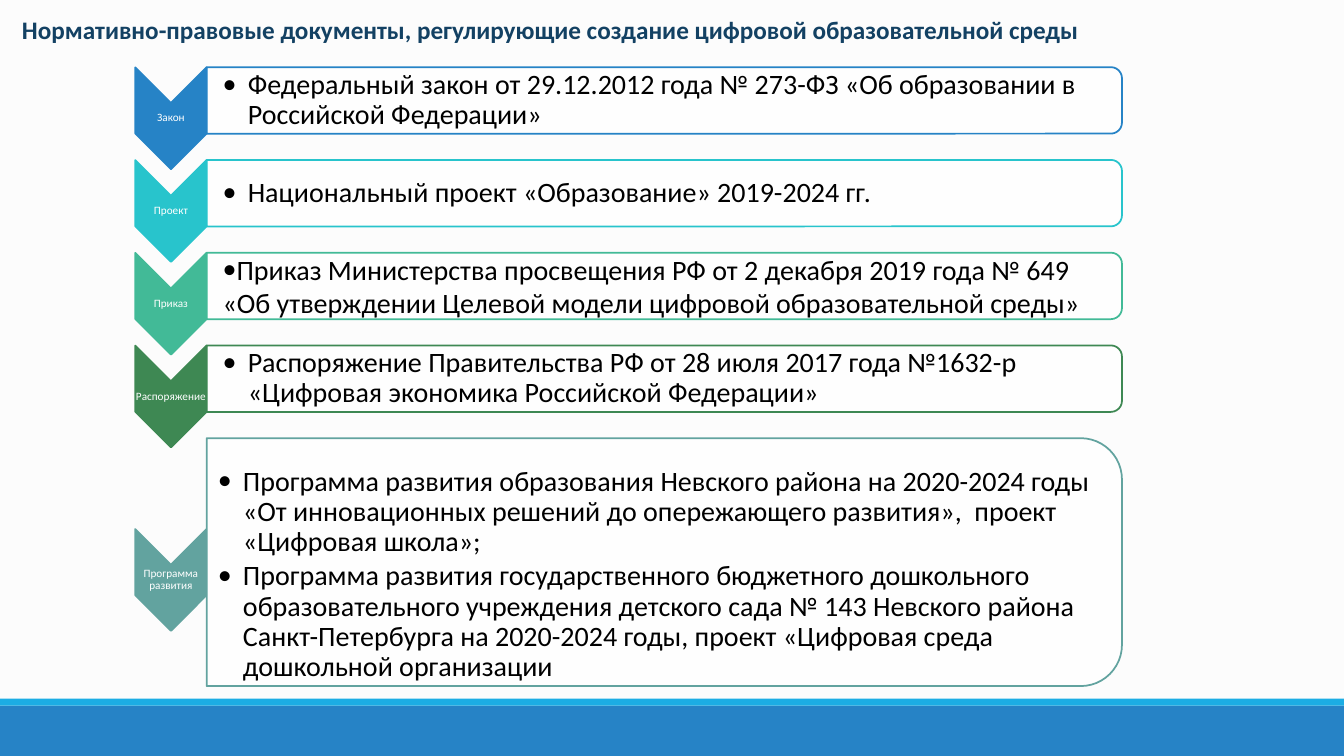
from dataclasses import dataclass

from lxml import etree
from pptx import Presentation
from pptx.dml.color import RGBColor
from pptx.enum import shapes, text
from pptx.oxml.ns import qn
from pptx.util import Pt

TITLE = "Нормативно-правовые документы, регулирующие создание цифровой образовательной среды"

# label, colour, hanging indent, documents
ROWS = [
    ("Закон", "2683C6", 18,
     ["Федеральный закон от 29.12.2012 года № 273-ФЗ «Об образовании в Российской Федерации»"]),
    ("Проект", "28C4CC", 18,
     ["Национальный проект «Образование» 2019-2024 гг."]),
    ("Приказ", "42BA97", 0,
     ["Приказ Министерства просвещения РФ от 2 декабря 2019 года № 649 "
      "«Об утверждении Целевой модели цифровой образовательной среды»"]),
    ("Распоряжение", "3E8853", 18,
     ["Распоряжение Правительства РФ от 28 июля 2017 года №1632-р "
      "«Цифровая экономика Российской Федерации»"]),
    ("Программа развития", "62A39F", 18,
     ["Программа развития образования Невского района на 2020-2024 годы "
      "«От инновационных решений до опережающего развития»,  проект «Цифровая школа»;",
      "Программа развития государственного бюджетного дошкольного образовательного "
      "учреждения детского сада № 143 Невского района Санкт-Петербурга на 2020-2024 годы, "
      "проект «Цифровая среда дошкольной организации"]),
]


@dataclass(frozen=True)
class Theme:
    font: str = "Calibri"
    background: str = "FCFCFC"
    footer: str = "2683C6"
    stripe: str = "1CADE4"
    title: str = "134163"
    body: str = "000000"
    white: str = "FFFFFF"
    title_size: int = 18
    body_size: int = 20
    label_size: int = 8
    outline: float = 1.25


THEME = Theme()
SLIDE_W, SLIDE_H = 960, 540
FOOTER_TOP, STRIPE_H = 504, 5
PANEL_LEFT, PANEL_W, PANEL_H, LAST_PANEL_H = 147.6, 653.8, 47.5, 177.1
FIRST_PANEL_TOP, GAP = 48, 18.75
CHEVRON_LENGTH, CHEVRON_W, CHEVRON_DROP = 72.7, 51, 12.7
LABEL_W, LABEL_H, INSET = 54, 21.6, 0.9


def rgb(value):
    return RGBColor.from_string(value)


def add_block(slide, kind, cx, cy, w, h, fill, line=None, rotation=0):
    """Add a filled shape centred on (cx, cy); w and h are taken before rotation."""
    sp = slide.shapes.add_shape(kind, Pt(cx - w / 2), Pt(cy - h / 2), Pt(w), Pt(h))
    sp.shadow.inherit = False
    sp.rotation = rotation
    sp.fill.solid()
    sp.fill.fore_color.rgb = rgb(fill)
    if line:
        sp.line.color.rgb = rgb(line)
        sp.line.width = Pt(THEME.outline)
    else:
        sp.line.fill.background()
    return sp


def set_opacity(sp, percent):
    color = sp.fill._xPr.find(qn("a:solidFill"))[0]
    etree.SubElement(color, qn("a:alpha")).set("val", str(percent * 1000))


def add_text(slide, box, lines, size, color, insets=None, bold=False):
    """Add a wrapped text box; insets also centre the text vertically."""
    tf = slide.shapes.add_textbox(*map(Pt, box)).text_frame
    tf.word_wrap = True
    if insets:
        tf.margin_left, tf.margin_top, tf.margin_right, tf.margin_bottom = map(Pt, insets)
        tf.vertical_anchor = text.MSO_ANCHOR.MIDDLE
    tf.text = "\n".join(lines)
    for p in tf.paragraphs:
        font = p.runs[0].font
        font.name, font.size, font.bold = THEME.font, Pt(size), bold
        font.color.rgb = rgb(color)
    return tf


def add_bullet(p, indent):
    pPr = p._p.get_or_add_pPr()
    pPr.set("marL", str(Pt(indent)))
    pPr.set("indent", str(-Pt(indent)))
    etree.SubElement(pPr, qn("a:buFont")).set("typeface", THEME.font)
    etree.SubElement(pPr, qn("a:buChar")).set("char", "•")


def add_row(slide, top, height, row, text_inset, text_drop):
    label, color, indent, documents = row
    middle = top + height / 2
    chevron_y = middle + CHEVRON_DROP
    chevron_x = PANEL_LEFT - CHEVRON_W / 2

    add_block(slide, shapes.MSO_SHAPE.CHEVRON, chevron_x, chevron_y,
              CHEVRON_LENGTH, CHEVRON_W, color, color, 90)
    panel = add_block(slide, shapes.MSO_SHAPE.ROUND_2_SAME_RECTANGLE, PANEL_LEFT + PANEL_W / 2,
                      middle, height, PANEL_W, THEME.white, color, 90)
    set_opacity(panel, 90)

    # The label box is a little wider than the chevron, so the longest word stays whole
    tf = add_text(slide, (chevron_x - LABEL_W / 2, chevron_y - LABEL_H / 2, LABEL_W, LABEL_H),
                  [label], THEME.label_size, THEME.white, (0, INSET, 0, INSET))
    tf.paragraphs[0].alignment = text.PP_ALIGN.CENTER
    tf.paragraphs[0].line_spacing = 0.9

    # The text keeps clear of the rounded corners
    corner = height * 0.05
    tf = add_text(slide, (PANEL_LEFT, top + corner + text_drop, PANEL_W - corner, height - 2 * corner),
                  documents, THEME.body_size, THEME.body, (text_inset, INSET, INSET, INSET))
    for p in tf.paragraphs:
        if indent:
            p.line_spacing = 0.9
            p.space_after = Pt(3)
        add_bullet(p, indent)


def main():
    prs = Presentation()
    prs.slide_width, prs.slide_height = Pt(SLIDE_W), Pt(SLIDE_H)
    slide = prs.slides.add_slide(prs.slide_layouts[6])
    slide.background.fill.solid()
    slide.background.fill.fore_color.rgb = rgb(THEME.background)

    for top, bottom, color in ((FOOTER_TOP, SLIDE_H, THEME.footer),
                               (FOOTER_TOP - STRIPE_H, FOOTER_TOP, THEME.stripe)):
        add_block(slide, shapes.MSO_SHAPE.RECTANGLE, SLIDE_W / 2, (top + bottom) / 2,
                  SLIDE_W, bottom - top, color)
    add_text(slide, (8.6, 7, 813, 29), [TITLE], THEME.title_size, THEME.title, bold=True)

    for i, row in enumerate(ROWS):
        is_last = i == len(ROWS) - 1
        add_row(slide, FIRST_PANEL_TOP + i * (PANEL_H + GAP),
                LAST_PANEL_H if is_last else PANEL_H, row,
                text_inset=8 if is_last else 11.4, text_drop=9 if is_last else 0)
    prs.save("out.pptx")


if __name__ == "__main__":
    main()
